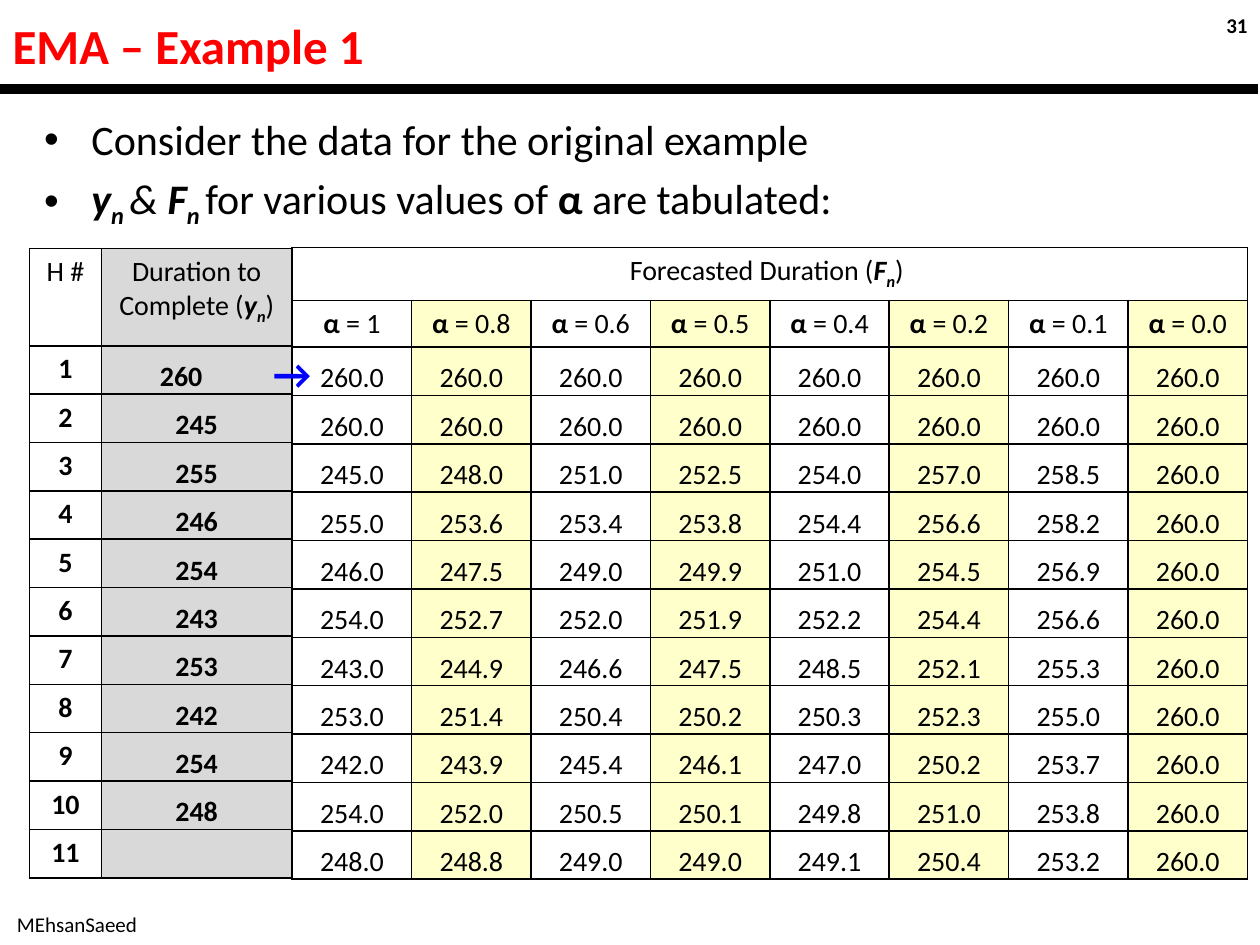
from lxml.etree import SubElement
from pptx import Presentation
from pptx.dml.color import RGBColor
from pptx.enum.shapes import MSO_CONNECTOR
from pptx.enum.text import MSO_ANCHOR, MSO_AUTO_SIZE, PP_ALIGN
from pptx.oxml import parse_xml
from pptx.oxml.ns import nsdecls, qn
from pptx.util import Pt

BLACK = RGBColor(0, 0, 0)
WHITE = RGBColor(255, 255, 255)
RED = RGBColor(255, 0, 0)
BLUE = RGBColor(0, 0, 255)
GRAY = RGBColor(0xD9, 0xD9, 0xD9)
YELLOW = RGBColor(0xFF, 0xFF, 0xCC)
ROW_HEIGHT = 27.65

DURATIONS = ["260", "245", "255", "246", "254", "243", "253", "242", "254", "248", ""]
FORECASTS = {
    "1": "260.0 260.0 245.0 255.0 246.0 254.0 243.0 253.0 242.0 254.0 248.0",
    "0.8": "260.0 260.0 248.0 253.6 247.5 252.7 244.9 251.4 243.9 252.0 248.8",
    "0.6": "260.0 260.0 251.0 253.4 249.0 252.0 246.6 250.4 245.4 250.5 249.0",
    "0.5": "260.0 260.0 252.5 253.8 249.9 251.9 247.5 250.2 246.1 250.1 249.0",
    "0.4": "260.0 260.0 254.0 254.4 251.0 252.2 248.5 250.3 247.0 249.8 249.1",
    "0.2": "260.0 260.0 257.0 256.6 254.5 254.4 252.1 252.3 250.2 251.0 250.4",
    "0.1": "260.0 260.0 258.5 258.2 256.9 256.6 255.3 255.0 253.7 253.8 253.2",
    "0.0": "260.0 260.0 260.0 260.0 260.0 260.0 260.0 260.0 260.0 260.0 260.0",
}


def add_text(paragraph, text, size=16, color=BLACK, bold=False, italic=False, subscript=False):
    run = paragraph.add_run()
    run.text = text
    run.font.name = "Calibri"
    run.font.size = Pt(size)
    run.font.color.rgb = color
    run.font.bold = bold
    run.font.italic = italic
    if subscript:
        run.font._element.set("baseline", "-25000")


def format_cell(cell, fill=WHITE, tight=False):
    cell.fill.solid()
    cell.fill.fore_color.rgb = fill
    properties = cell._tc.get_or_add_tcPr()
    for position, side in enumerate(("lnL", "lnR", "lnT", "lnB")):
        properties.insert(position, parse_xml(
            f'<a:{side} {nsdecls("a")} w="12700"><a:solidFill>'
            f'<a:srgbClr val="{BLACK}"/></a:solidFill></a:{side}>'))
    if tight:
        cell.vertical_anchor = MSO_ANCHOR.BOTTOM
        cell.margin_left = cell.margin_right = cell.margin_top = Pt(0.72)
        cell.margin_bottom = Pt(0)
    paragraph = cell.text_frame.paragraphs[0]
    paragraph.alignment = PP_ALIGN.CENTER
    return paragraph


presentation = Presentation()
presentation.slide_width = Pt(720)
presentation.slide_height = Pt(540)
slide = presentation.slides.add_slide(presentation.slide_layouts[1])
shapes = slide.shapes

title = shapes.title
title.left, title.top, title.width, title.height = Pt(0), Pt(0), Pt(648), Pt(51)
title.text_frame.auto_size = MSO_AUTO_SIZE.NONE
title.text_frame.vertical_anchor = MSO_ANCHOR.MIDDLE
paragraph = title.text_frame.paragraphs[0]
paragraph.alignment = PP_ALIGN.LEFT
add_text(paragraph, "EMA – Example 1", size=28, color=RED, bold=True)

body = slide.placeholders[1]
body.left, body.top, body.width, body.height = Pt(18), Pt(61.2), Pt(684), Pt(478.8)
body.text_frame.auto_size = MSO_AUTO_SIZE.NONE
consider = body.text_frame.paragraphs[0]
add_text(consider, "Consider the data for the original example", size=24)
tabulated = body.text_frame.add_paragraph()
for symbol, joiner in (("y", "& "), ("F", "")):
    add_text(tabulated, symbol, size=24, bold=True, italic=True)
    add_text(tabulated, "n ", size=24, bold=True, italic=True, subscript=True)
    if joiner:
        add_text(tabulated, joiner, size=24, italic=True)
add_text(tabulated, "for various values of ", size=24)
add_text(tabulated, "α", size=24, bold=True)
add_text(tabulated, " are tabulated:", size=24)
for paragraph in (consider, tabulated):
    properties = paragraph._p.get_or_add_pPr()
    properties.set("marL", str(Pt(27)))
    properties.set("indent", str(Pt(-27)))

rule = shapes.add_connector(MSO_CONNECTOR.STRAIGHT, Pt(-1.4), Pt(51), Pt(718.6), Pt(51))
rule.line.color.rgb = BLACK
rule.line.width = Pt(6)
SubElement(rule._element.spPr, qn("a:effectLst"))

row_count = len(DURATIONS)
frame = shapes.add_table(row_count + 1, 2, Pt(16.9), Pt(142), Pt(150), Pt(360))
duration_table = frame.table
duration_table.columns[0].width = Pt(41)
duration_table.columns[1].width = Pt(109)
for row in duration_table.rows:
    row.height = Pt(ROW_HEIGHT)
duration_table.rows[0].height = Pt(55.6)
add_text(format_cell(duration_table.cell(0, 0)), "H #")
heading = format_cell(duration_table.cell(0, 1), fill=GRAY)
add_text(heading, "Duration to Complete (")
add_text(heading, "y", bold=True, italic=True)
add_text(heading, "n", bold=True, italic=True, subscript=True)
add_text(heading, ")")
for number, duration in enumerate(DURATIONS, 1):
    add_text(format_cell(duration_table.cell(number, 0)), str(number), bold=True)
    paragraph = format_cell(duration_table.cell(number, 1), fill=GRAY, tight=True)
    if duration:
        add_text(paragraph, duration, bold=True)
duration_table.cell(1, 1).margin_right = Pt(18.5)

frame = shapes.add_table(row_count + 2, len(FORECASTS), Pt(167), Pt(141.4), Pt(546), Pt(361))
forecast_table = frame.table
for column in forecast_table.columns:
    column.width = Pt(68.25)
for row in forecast_table.rows:
    row.height = Pt(ROW_HEIGHT)
forecast_table.rows[0].height = Pt(30.2)
forecast_table.rows[1].height = Pt(26.8)
forecast_table.cell(0, 0).merge(forecast_table.cell(0, len(FORECASTS) - 1))
for column in range(len(FORECASTS)):
    format_cell(forecast_table.cell(0, column))
heading = forecast_table.cell(0, 0).text_frame.paragraphs[0]
add_text(heading, "Forecasted Duration (")
add_text(heading, "F", bold=True, italic=True)
add_text(heading, "n", bold=True, italic=True, subscript=True)
add_text(heading, ") ")
for column, (alpha, forecasts) in enumerate(FORECASTS.items()):
    fill = YELLOW if column % 2 else WHITE
    paragraph = format_cell(forecast_table.cell(1, column), fill=fill)
    add_text(paragraph, "α ", bold=True)
    add_text(paragraph, f"= {alpha}")
    for row, forecast in enumerate(forecasts.split(), 2):
        add_text(format_cell(forecast_table.cell(row, column), fill=fill, tight=True), forecast)

for text, left, top, width, height, size, color, bold, alignment, anchor in (
    ("31", 552, 0, 168, 29, 12, BLACK, True, PP_ALIGN.RIGHT, MSO_ANCHOR.MIDDLE),
    ("→", 149, 195, 39, 36, 24, BLUE, True, PP_ALIGN.LEFT, MSO_ANCHOR.TOP),
    ("MEhsanSaeed", -1, 513.4, 90, 29, 12, BLACK, False, PP_ALIGN.CENTER, MSO_ANCHOR.MIDDLE),
):
    box = shapes.add_textbox(Pt(left), Pt(top), Pt(width), Pt(height))
    box.text_frame.word_wrap = True
    box.text_frame.vertical_anchor = anchor
    paragraph = box.text_frame.paragraphs[0]
    paragraph.alignment = alignment
    add_text(paragraph, text, size=size, color=color, bold=bold)

presentation.save("out.pptx")
